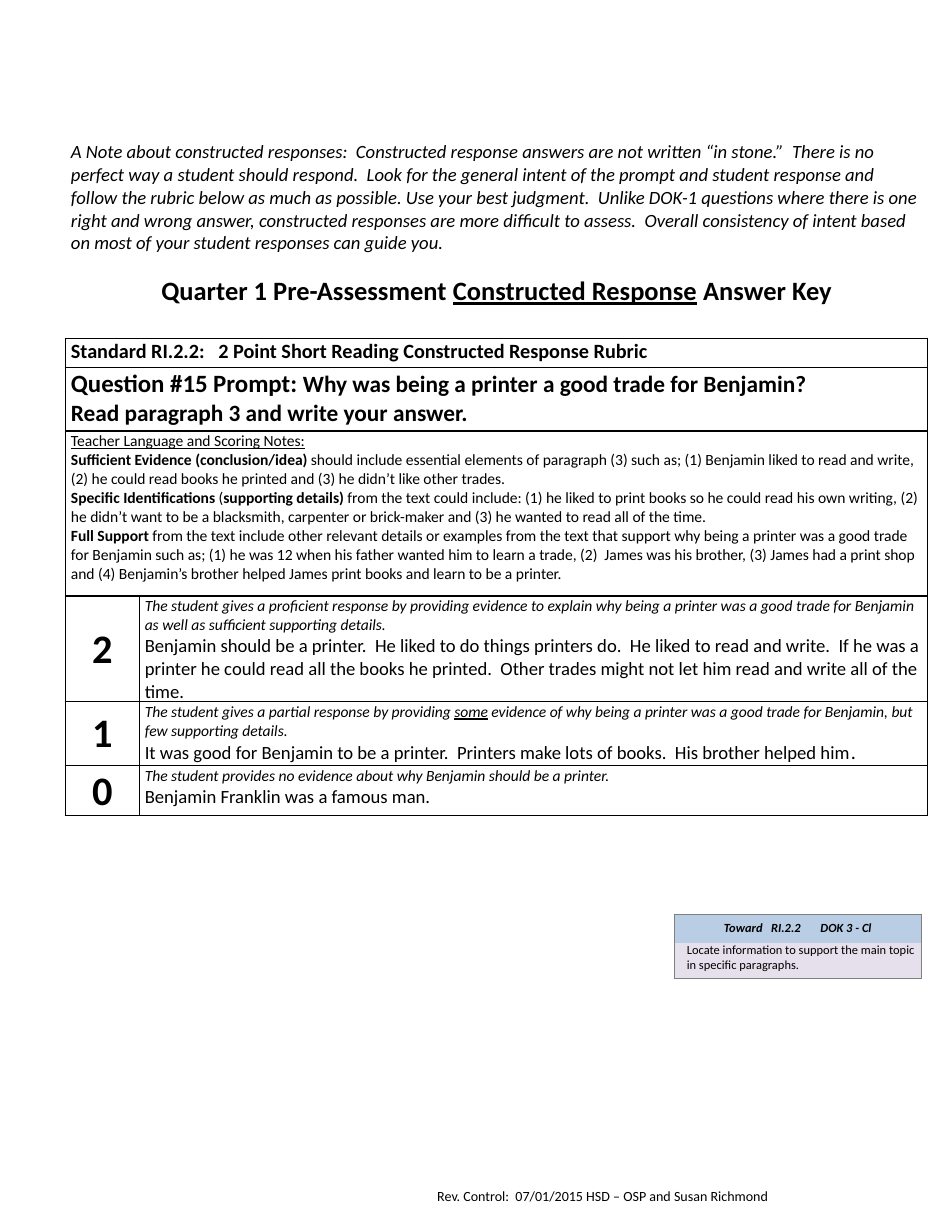
from dataclasses import dataclass
from typing import Any

from lxml.etree import SubElement
from pptx import Presentation
from pptx.dml.color import RGBColor as Color
from pptx.enum.text import MSO_ANCHOR as Anchor, PP_ALIGN as Align
from pptx.oxml.ns import qn
from pptx.util import Pt


@dataclass(frozen=True)
class Theme:
    font: str = "Calibri"
    ink: str = "000000"
    paper: str = "FFFFFF"
    gray: str = "808080"
    blue: str = "B9CDE5"
    lilac: str = "E6E0EC"
    score: int = 26
    title: int = 17
    question: int = 16
    prompt: int = 15
    standard: int = 13
    body: int = 12
    notes: int = 10
    footer: int = 9
    label: int = 8


THEME = Theme()


def write_text(paragraph, text, size=THEME.notes, bold=False, italic=False, underline=False):
    run = paragraph.add_run()
    run.text = text
    font = run.font
    font.name, font.size = THEME.font, Pt(size)
    font.bold, font.italic, font.underline = bold, italic, underline
    font.color.rgb = Color.from_string(THEME.ink)


def part(text, **style):
    return text, style


@dataclass
class Page:
    theme: Theme
    slide: Any

    def fill_frame(self, frame, paragraphs, align=Align.LEFT, hanging=None):
        frame.word_wrap = True
        for index, parts in enumerate(paragraphs):
            paragraph = frame.add_paragraph() if index else frame.paragraphs[0]
            paragraph.alignment = align
            if index == hanging:
                properties = paragraph._p.get_or_add_pPr()
                properties.set("marL", str(Pt(36)))
                properties.set("indent", str(-Pt(36)))
            for text, style in parts:
                write_text(paragraph, text, **style)

    def text_box(self, left, top, width, height, paragraphs):
        box = self.slide.shapes.add_textbox(Pt(left), Pt(top), Pt(width), Pt(height))
        self.fill_frame(box.text_frame, paragraphs)

    def table(self, left, top, columns, rows):
        shape = self.slide.shapes.add_table(
            len(rows), len(columns), Pt(left), Pt(top), Pt(sum(columns)), Pt(sum(rows)))
        table = shape.table
        table.first_row = table.horz_banding = False
        for column, width in zip(table.columns, columns):
            column.width = Pt(width)
        for row, height in zip(table.rows, rows):
            row.height = Pt(height)
        return table

    def style_cell(self, cell, fill, sides, line, margins):
        cell.fill.solid()
        cell.fill.fore_color.rgb = Color.from_string(fill)
        cell.margin_left, cell.margin_top, cell.margin_right, cell.margin_bottom = map(Pt, margins)
        properties = cell._tc.get_or_add_tcPr()
        for index, side in enumerate("LRTB"):
            border = SubElement(properties, qn(f"a:ln{side}"), w=str(Pt(1)))
            if side in sides:
                color = SubElement(border, qn("a:solidFill"))
                SubElement(color, qn("a:srgbClr"), val=line)
            else:
                SubElement(border, qn("a:noFill"))
            properties.insert(index, border)

    def cell(self, cell, paragraphs, fill=THEME.paper, sides="LRTB", line=THEME.ink,
             margins=(3.6, 0.7, 3.6, 0), anchor=Anchor.TOP, **layout):
        self.style_cell(cell, fill, sides, line, margins)
        cell.vertical_anchor = anchor
        self.fill_frame(cell.text_frame, paragraphs, **layout)

    def wide_row(self, table, row, paragraphs, sides="LRTB", **layout):
        first, last = table.cell(row, 0), table.cell(row, 1)
        first.merge(last)
        self.cell(first, paragraphs, sides=sides, **layout)
        self.cell(last, [], sides=sides)

    def score_row(self, table, row, score, paragraphs):
        self.cell(table.cell(row, 0), [[part(score, size=self.theme.score, bold=True)]],
                  anchor=Anchor.MIDDLE, align=Align.CENTER)
        self.cell(table.cell(row, 1), paragraphs)


INTRO = [[part(
    "A Note about constructed responses:  Constructed response answers are not written “in stone.”  "
    "There is no perfect way a student should respond.  Look for the general intent of the prompt and "
    "student response and follow the rubric below as much as possible. Use your best judgment.  Unlike "
    "DOK-1 questions where there is one right and wrong answer, constructed responses are more difficult "
    "to assess.  Overall consistency of intent based on most of your student responses can guide you.",
    size=THEME.body, italic=True)]]

TITLE = [[
    part("Quarter 1 Pre-Assessment ", size=THEME.title, bold=True),
    part("Constructed Response", size=THEME.title, bold=True, underline=True),
    part(" Answer Key", size=THEME.title, bold=True)]]

STANDARD = [[part("Standard RI.2.2:   2 Point Short Reading Constructed Response Rubric",
                  size=THEME.standard, bold=True)]]

QUESTION = [
    [part("Question #15 Prompt: ", size=THEME.question, bold=True),
     part("Why was being a printer a good trade for Benjamin?", size=THEME.prompt, bold=True)],
    [part("Read paragraph 3 and write your answer.", size=THEME.prompt, bold=True)]]

NOTES = [
    [part("Teacher Language and Scoring Notes:", underline=True)],
    [part("Sufficient Evidence (conclusion/idea)", bold=True),
     part(" should include essential elements of paragraph (3) such as; (1) Benjamin liked to read and "
          "write, (2) he could read books he printed and (3) he didn’t like other trades.")],
    [part("Specific Identifications", bold=True),
     part(" ("),
     part("supporting details) ", bold=True),
     part("from the text could include: (1) he liked to print books so he could read his own writing, "
          "(2) he didn’t want to be a blacksmith, carpenter or brick-maker and (3) he wanted to read all "
          "of the time.")],
    [part("Full Support ", bold=True),
     part("from the text include other relevant details or examples from the text that support why being "
          "a printer was a good trade for Benjamin such as; (1) he was 12 when his father wanted him to "
          "learn a trade, (2)  James was his brother, (3) James had a print shop and (4) Benjamin’s "
          "brother helped James print books and learn to be a printer.")]]

SCORES = {
    "2": [
        [part("The student gives a proficient response by providing evidence to explain why being a "
              "printer was a good trade for Benjamin as well as sufficient supporting details.",
              italic=True)],
        [part("Benjamin should be a printer.  He liked to do things printers do.  He liked to read and "
              "write.  If he was a printer he could read all the books he printed.  Other trades might "
              "not let him read and write all of the time.", size=THEME.body)]],
    "1": [
        [part("The student gives a partial response by providing ", italic=True),
         part("some", italic=True, underline=True),
         part(" evidence of why being a printer was a good trade for Benjamin, but few supporting "
              "details.", italic=True)],
        [part("It was good for Benjamin to be a printer.  Printers make lots of books.  His brother "
              "helped him", size=THEME.body),
         part(".", size=THEME.standard)]],
    "0": [
        [part("The student provides no evidence about why Benjamin should be a printer.", italic=True)],
        [part("Benjamin Franklin was a famous man.", size=THEME.body)]]}


def main():
    presentation = Presentation()
    presentation.slide_width, presentation.slide_height = Pt(612), Pt(792)
    page = Page(THEME, presentation.slides.add_slide(presentation.slide_layouts[6]))

    page.text_box(274, 760, 306, 19, [[
        part("Rev. Control:  07/01/2015 HSD – OSP and Susan Richmond", size=THEME.footer)]])

    rubric = page.table(42, 90, [47.5, 507], [86.5, 41, 18.7, 41, 106, 67, 41, 32])
    page.wide_row(rubric, 0, INTRO, sides="")
    page.wide_row(rubric, 1, TITLE, sides="B", align=Align.CENTER)
    page.wide_row(rubric, 2, STANDARD)
    page.wide_row(rubric, 3, QUESTION, hanging=1)
    page.wide_row(rubric, 4, NOTES)
    for row, (score, paragraphs) in enumerate(SCORES.items(), 5):
        page.score_row(rubric, row, score, paragraphs)

    target = page.table(433.5, 588, [159], [18, 23])
    page.cell(target.cell(0, 0),
              [[part("Toward   RI.2.2       DOK 3 - Cl", size=THEME.label, bold=True, italic=True)]],
              fill=THEME.blue, sides="LRT", line=THEME.gray, margins=(3, 0, 3, 0),
              anchor=Anchor.MIDDLE, align=Align.CENTER)
    page.cell(target.cell(1, 0),
              [[part("Locate information to support the main topic in specific paragraphs.",
                     size=THEME.label)]],
              fill=THEME.lilac, sides="LRB", line=THEME.gray, margins=(8, 0, 3, 0))

    presentation.save("out.pptx")


if __name__ == "__main__":
    main()
